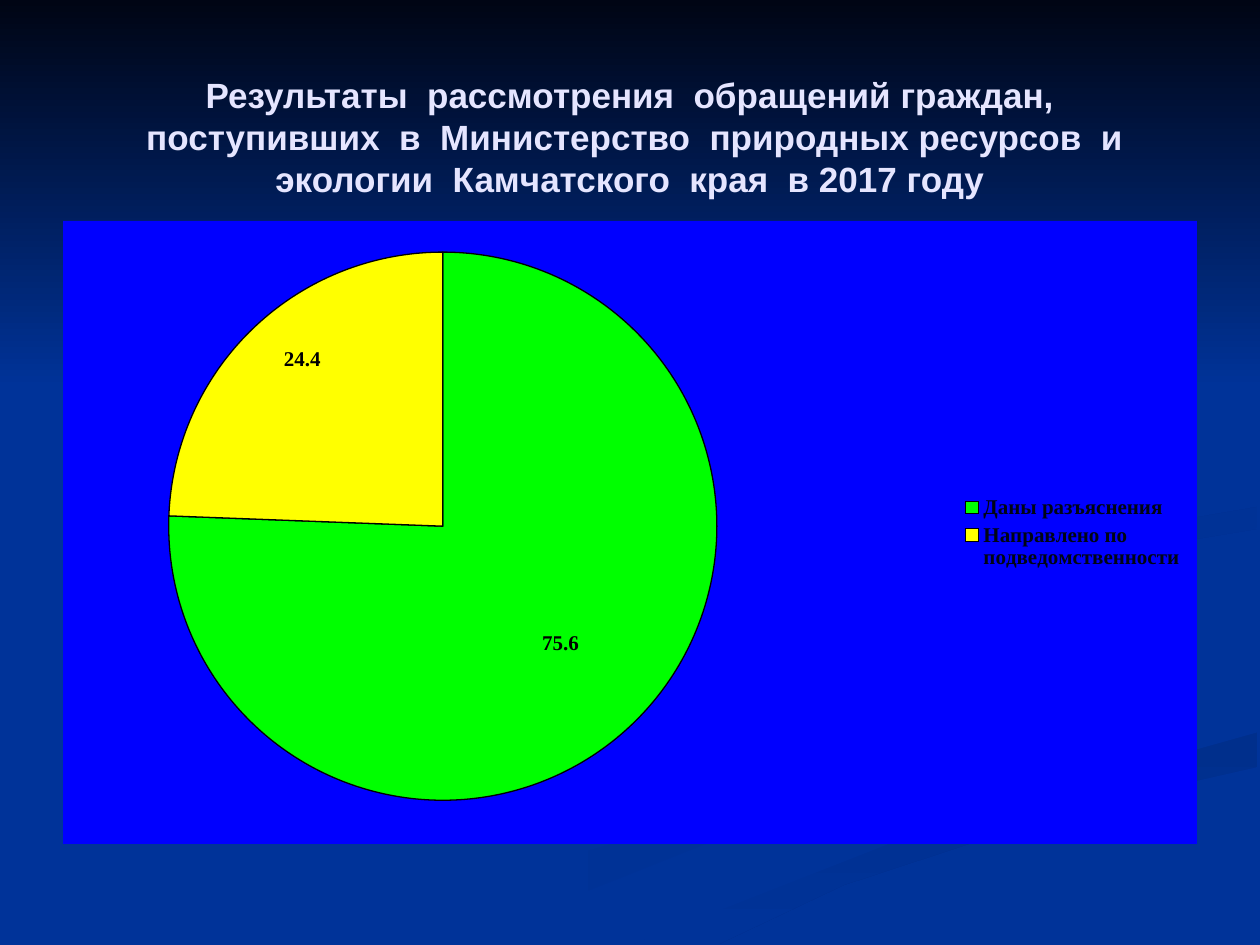
from lxml import etree
from pptx import Presentation
from pptx import util as u
from pptx.chart.data import CategoryChartData
from pptx.dml.color import RGBColor
from pptx.enum import chart as ch, text
from pptx.oxml import parse_xml
from pptx.oxml.ns import nsdecls, qn

PX = 914400 / 126
WIDTH, HEIGHT = 1260, 945
NAVY, BLACK, YELLOW, GREEN = "003399", "000000", "FFFF00", "00FF00"

# Each ribbon: outline, gradient colours, clockwise angle
RIBBONS = [
    ([(984, 697), (774, 625), (725, 578), (770, 629), (990, 713), (862, 772),
      (525, 869), (378, 944), (455, 944), (748, 827), (1008, 732)], (NAVY, "003193"), 0),
    ([(1188, 718), (924, 609), (912, 585), (940, 630), (1157, 732), (1126, 762)],
     (NAVY, "003193"), 45),
    ([(634, 944), (719, 944), (844, 885), (1085, 806), (1257, 767), (1257, 732),
      (963, 815), (717, 906)], ("002F8C", NAVY), 90),
    ([(914, 585), (1188, 718), (887, 825), (601, 944), (634, 944), (963, 815),
      (1259, 732), (1259, 678), (990, 596), (1259, 507), (1259, 488), (970, 538)],
     (NAVY, NAVY), 0),
    ([(984, 580), (1041, 625), (1014, 595), (1082, 558), (1257, 529), (1257, 507),
      (1052, 542)], ("003091", NAVY), 45),
    ([(861, 542), (1040, 507), (1126, 433), (1076, 357), (960, 294), (1120, 422),
      (1061, 476), (752, 551), (727, 582), (784, 630), (747, 592)], ("002F8E", NAVY), 45),
]
TOP_SHADE = [(0, 0), (0, 388), (WIDTH, 388), (WIDTH, 0)]


def px(*lengths):
    return [u.Emu(round(n * PX)) for n in lengths]


def rgb(value):
    return RGBColor.from_string(value)


def set_font(font, size, color, name="Times New Roman", bold=False):
    font.size, font.name, font.bold = u.Pt(size), name, bold
    font.color.rgb = rgb(color)


def manual_layout(**values):
    """Chart layout element; keys are the c: tags in schema order."""
    layout = parse_xml(f"<c:layout {nsdecls('c')}><c:manualLayout/></c:layout>")
    for tag, value in values.items():
        etree.SubElement(layout[0], qn(f"c:{tag}")).set("val", str(value))
    return layout


class SlideBuilder:
    """Holds the slide and draws each kind of element on it."""

    def __init__(self, prs, background):
        self.s = prs.slides.add_slide(prs.slide_layouts[6])
        fill = self.s.background.fill
        fill.solid()
        fill.fore_color.rgb = rgb(background)

    def outline(self, points, colors, angle):
        """Closed freeform with a two-colour gradient, angle clockwise."""
        builder = self.s.shapes.build_freeform(*points[0], scale=PX)
        builder.add_line_segments(points[1:], close=True)
        sp = builder.convert_to_shape()
        sp.shadow.inherit = False
        sp.line.fill.background()
        sp.fill.gradient()
        sp.fill.gradient_angle = -angle % 360
        for stop, position, color in zip(sp.fill.gradient_stops, (0, 1), colors):
            stop.position = position
            stop.color.rgb = rgb(color)

    def text(self, content, box, **style):
        tf = self.s.shapes.add_textbox(*px(*box)).text_frame
        tf.word_wrap = True
        tf.vertical_anchor = text.MSO_ANCHOR.MIDDLE
        p = tf.paragraphs[0]
        p.text = content
        p.alignment = text.PP_ALIGN.CENTER
        for r in p.runs:
            set_font(r.font, **style)

    def pie(self, slices, box, background, plot_box):
        """slices: (category, value, colour, label offset) for each slice."""
        data = CategoryChartData()
        data.categories = [item[0] for item in slices]
        data.add_series("Series 1", [item[1] for item in slices])
        chart = self.s.shapes.add_chart(ch.XL_CHART_TYPE.PIE, *px(*box), data).chart
        chart.has_title = False
        set_font(chart.font, 10, "FFFFFF")
        chart.has_legend = True
        chart.legend.position = ch.XL_LEGEND_POSITION.RIGHT
        chart.legend.include_in_layout = False
        set_font(chart.legend.font, 12, "000514", bold=True)

        space = chart._chartSpace
        space.find(qn("c:chart")).addnext(parse_xml(
            f"<c:spPr {nsdecls('c', 'a')}><a:solidFill><a:srgbClr val='{background}'/>"
            "</a:solidFill><a:ln><a:noFill/></a:ln></c:spPr>"))
        plot_area = space.find(".//" + qn("c:plotArea"))
        for old in plot_area.findall(qn("c:layout")):
            plot_area.remove(old)
        x, y, w, h = plot_box
        plot_area.insert(0, manual_layout(layoutTarget="inner", xMode="edge", yMode="edge",
                                          x=x, y=y, w=w, h=h))

        plot = chart.plots[0]
        plot.vary_by_categories = True
        plot.has_data_labels = True
        plot.data_labels.show_value = True
        plot.data_labels.show_percentage = False
        set_font(plot.data_labels.font, 12, BLACK, bold=True)
        for i, (_, _, color, _) in enumerate(slices):
            point = plot.series[0].points[i]
            point.format.fill.solid()
            point.format.fill.fore_color.rgb = rgb(color)
            point.format.line.color.rgb = rgb(BLACK)
            point.format.line.width = u.Pt(0.75)
            set_font(point.data_label.font, 12, BLACK, bold=True)
            point.data_label.position = ch.XL_LABEL_POSITION.CENTER
        for label, (*_, (dx, dy)) in zip(space.iter(qn("c:dLbl")), slices):
            label.find(qn("c:idx")).addnext(manual_layout(x=dx, y=dy))


def main():
    prs = Presentation()
    prs.slide_width, prs.slide_height = px(WIDTH, HEIGHT)
    slide = SlideBuilder(prs, NAVY)
    for ribbon in RIBBONS:
        slide.outline(*ribbon)
    slide.outline(TOP_SHADE, ("000514", NAVY), 90)
    slide.text("Результаты  рассмотрения  обращений граждан,\v"
               " поступивших  в  Министерство  природных ресурсов  и "
               "экологии  Камчатского  края  в 2017 году",
               (63, 38, 1134, 197), size=20, color="E5E5FF", name="Arial", bold=True)
    slide.pie([("Даны разъяснения", 75.6, GREEN, (0.02, 0.03)),
               ("Направлено по подведомственности", 24.4, YELLOW, (-0.04, -0.11))],
              (63, 221, 1134, 623), "0000FF", (0.07, 0.05, 0.53, 0.88))
    prs.save("out.pptx")


if __name__ == "__main__":
    main()
